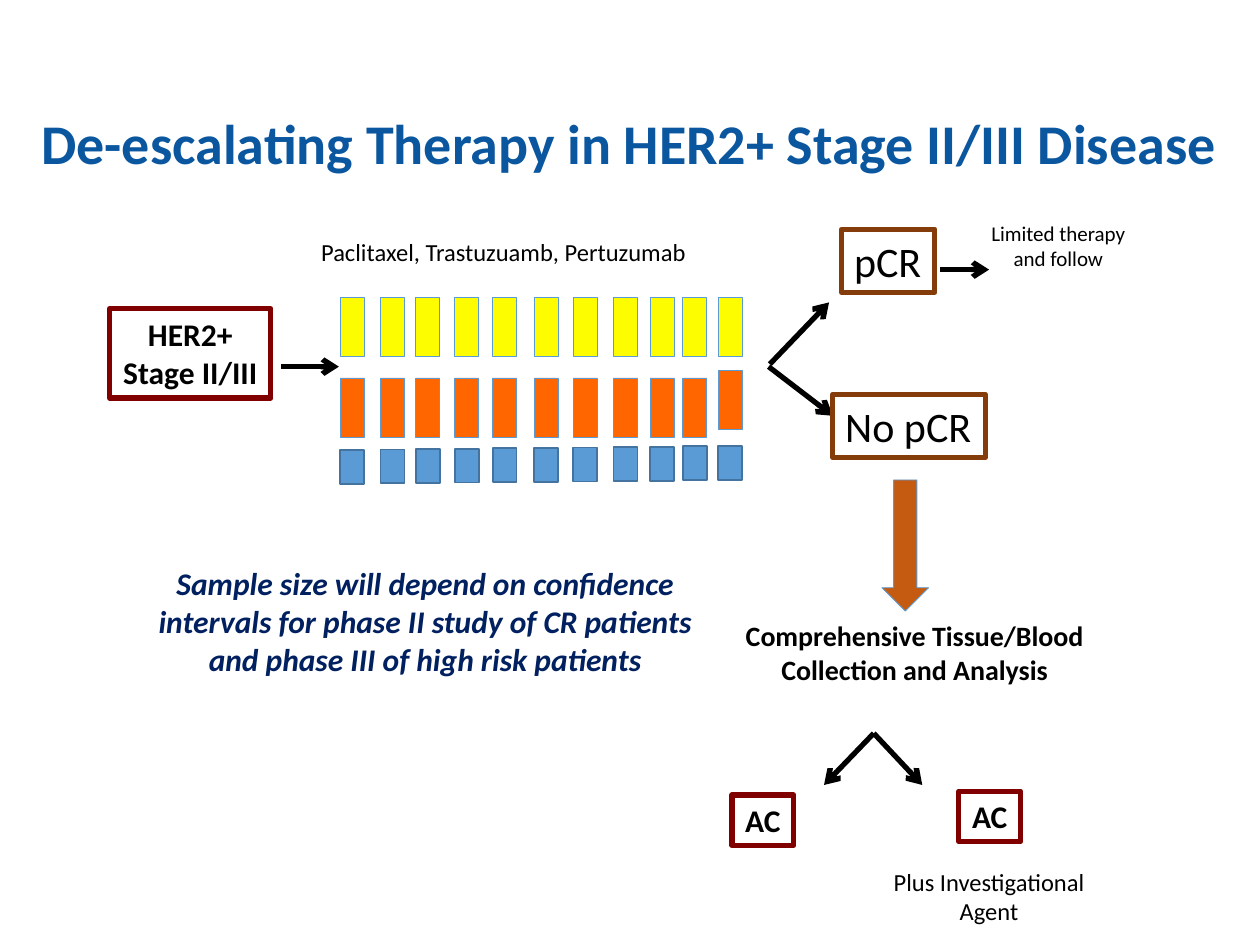
from dataclasses import dataclass

from lxml import etree
from pptx import Presentation
from pptx.dml.color import RGBColor
from pptx.enum.shapes import MSO_CONNECTOR, MSO_SHAPE
from pptx.enum.text import MSO_ANCHOR, MSO_AUTO_SIZE, PP_ALIGN
from pptx.oxml.ns import qn
from pptx.util import Inches, Pt

RECTANGLE = MSO_SHAPE.RECTANGLE
DOWN_ARROW = MSO_SHAPE.DOWN_ARROW
STRAIGHT = MSO_CONNECTOR.STRAIGHT
LEFT, CENTER = PP_ALIGN.LEFT, PP_ALIGN.CENTER
TOP, MIDDLE = MSO_ANCHOR.TOP, MSO_ANCHOR.MIDDLE
FIT_SHAPE = MSO_AUTO_SIZE.SHAPE_TO_FIT_TEXT

BLACK = RGBColor(0x00, 0x00, 0x00)
TITLE_BLUE = RGBColor(0x0A, 0x56, 0x9F)
NAVY = RGBColor(0x00, 0x20, 0x60)
MAROON = RGBColor(0x80, 0x00, 0x00)
BROWN = RGBColor(0x84, 0x3C, 0x0B)
RUST = RGBColor(0xC5, 0x5A, 0x11)
YELLOW = RGBColor(0xFD, 0xFD, 0x00)
ORANGE = RGBColor(0xFF, 0x66, 0x00)
BLUE = RGBColor(0x5B, 0x9B, 0xD5)
DARK_BLUE = RGBColor(0x43, 0x73, 0x9E)

FONT = "Calibri"
COLUMNS, ROWS = 100, 75
SLIDE_WIDTH, SLIDE_HEIGHT = Inches(10), Inches(7.5)


@dataclass
class Box:
    """An area measured in grid columns and rows."""
    left: float
    top: float
    width: float
    height: float

    def inner(self, left, top, width, height):
        return Box(self.left + left, self.top + top, width, height)

    def point(self, column, row):
        return (round((self.left + column) * SLIDE_WIDTH / COLUMNS),
                round((self.top + row) * SLIDE_HEIGHT / ROWS))

    def frame(self):
        return (*self.point(0, 0),
                round(self.width * SLIDE_WIDTH / COLUMNS),
                round(self.height * SLIDE_HEIGHT / ROWS))


def write(shape, lines, size, color=BLACK, bold=False, italic=False,
          align=CENTER, anchor=TOP):
    text_frame = shape.text_frame
    text_frame.text = "\n".join(lines)
    text_frame.word_wrap = False
    text_frame.auto_size = FIT_SHAPE
    text_frame.vertical_anchor = anchor
    for paragraph in text_frame.paragraphs:
        paragraph.alignment = align
        for run in paragraph.runs:
            run.font.name = FONT
            run.font.size = Pt(size)
            run.font.bold = bold
            run.font.italic = italic
            run.font.color.rgb = color


def add_label(slide, box, lines, size, **style):
    write(slide.shapes.add_textbox(*box.frame()), lines, size, **style)


def add_block(slide, kind, box, fill, line, line_width):
    shape = slide.shapes.add_shape(kind, *box.frame())
    shape.shadow.inherit = False
    if fill is None:
        shape.fill.background()
    else:
        shape.fill.solid()
        shape.fill.fore_color.rgb = fill
    shape.line.color.rgb = line
    shape.line.width = Pt(line_width)
    return shape


def add_framed_text(slide, box, lines, size, line, **style):
    write(add_block(slide, RECTANGLE, box, None, line, 3), lines, size, **style)


def add_arrow(slide, box, start, end):
    connector = slide.shapes.add_connector(
        STRAIGHT, *box.point(*start), *box.point(*end))
    connector.line.color.rgb = BLACK
    connector.line.width = Pt(3)
    properties = connector._element.spPr
    etree.SubElement(properties.find(qn("a:ln")), qn("a:tailEnd"), type="arrow")
    etree.SubElement(properties, qn("a:effectLst"))


def add_title(slide, box):
    add_label(slide, box, ["De-escalating Therapy in HER2+ Stage II/III Disease"],
              32, color=TITLE_BLUE, bold=True, anchor=MIDDLE)


def add_patients(slide, box):
    add_framed_text(slide, box.inner(0, 0, 12.8, 7.1), ["HER2+", "Stage II/III"],
                    18, MAROON, bold=True)
    add_arrow(slide, box, (13.6, 4.6), (18.2, 4.6))


def add_doses(slide, box):
    """One column per treatment cycle, one row per drug."""
    add_label(slide, box.inner(0, 0, 31.5, 3.4),
              ["Paclitaxel, Trastuzuamb, Pertuzumab"], 14, align=LEFT)
    cycles = [2.5, 5.7, 8.5, 11.6, 14.6, 17.9, 21, 24.2, 27.1, 29.7, 32.5]
    last = len(cycles) - 1
    for index, column in enumerate(cycles):
        orange_row = 11.1 if index == last else 11.7
        blue_row = 17.4 - 0.03 * index
        for row, height, fill, line, line_width in (
                (5.3, 4.7, YELLOW, BLUE, 0.5),
                (orange_row, 4.7, ORANGE, BLUE, 0.5),
                (blue_row, 2.7, BLUE, DARK_BLUE, 1)):
            add_block(slide, RECTANGLE, box.inner(column, row, 1.9, height),
                      fill, line, line_width)


def add_response(slide, box):
    add_arrow(slide, box, (0, 12.1), (5.1, 16))
    add_arrow(slide, box, (0.1, 11.9), (4.8, 7))
    add_framed_text(slide, box.inner(5.8, 1.2, 7.4, 5), ["pCR"], 24, BROWN, align=LEFT)
    add_framed_text(slide, box.inner(5.1, 14.3, 12.1, 5), ["No pCR"], 24, BROWN,
                    align=LEFT)
    add_arrow(slide, box, (13.6, 4.4), (17.5, 4.4))
    add_label(slide, box.inner(16.5, 0, 13, 5), ["Limited therapy", "and follow"], 12)


def add_follow_up(slide, box):
    add_block(slide, DOWN_ARROW, box.inner(12, 0, 3.7, 10.4), RUST, BLUE, 0.5)
    add_label(slide, box.inner(0, 10.5, 29.2, 6.4),
              ["Comprehensive Tissue/Blood", "Collection and Analysis"], 16, bold=True)
    fork = (11.35, 20.1)
    for arrow_column, box_column, box_row in ((7.4, 0.1, 25), (15.2, 18.1, 24.7)):
        add_arrow(slide, box, fork, (arrow_column, 24.2))
        add_framed_text(slide, box.inner(box_column, box_row, 4.9, 4), ["AC"], 18,
                        MAROON, bold=True)
    add_label(slide, box.inner(11.8, 30.2, 17.4, 5.7),
              ["Plus Investigational", "Agent"], 14)


def add_sample_note(slide, box):
    add_label(slide, box, ["Sample size will depend on confidence",
                           "intervals for phase II study of CR patients",
                           "and phase III of high risk patients"],
              18, color=NAVY, bold=True, italic=True)


def main():
    presentation = Presentation()
    presentation.slide_width = SLIDE_WIDTH
    presentation.slide_height = SLIDE_HEIGHT
    slide = presentation.slides.add_slide(presentation.slide_layouts[6])
    add_title(slide, Box(1.5, 5, 96.9, 12.5))
    add_patients(slide, Box(8.7, 24.5, 18.2, 7.1))
    add_doses(slide, Box(24.5, 18.3, 34.4, 20.1))
    add_response(slide, Box(61, 17, 29.5, 19.3))
    add_follow_up(slide, Box(58, 38.1, 29.2, 35.9))
    add_sample_note(slide, Box(11, 44.3, 45.5, 10.1))
    presentation.save("out.pptx")


if __name__ == "__main__":
    main()
